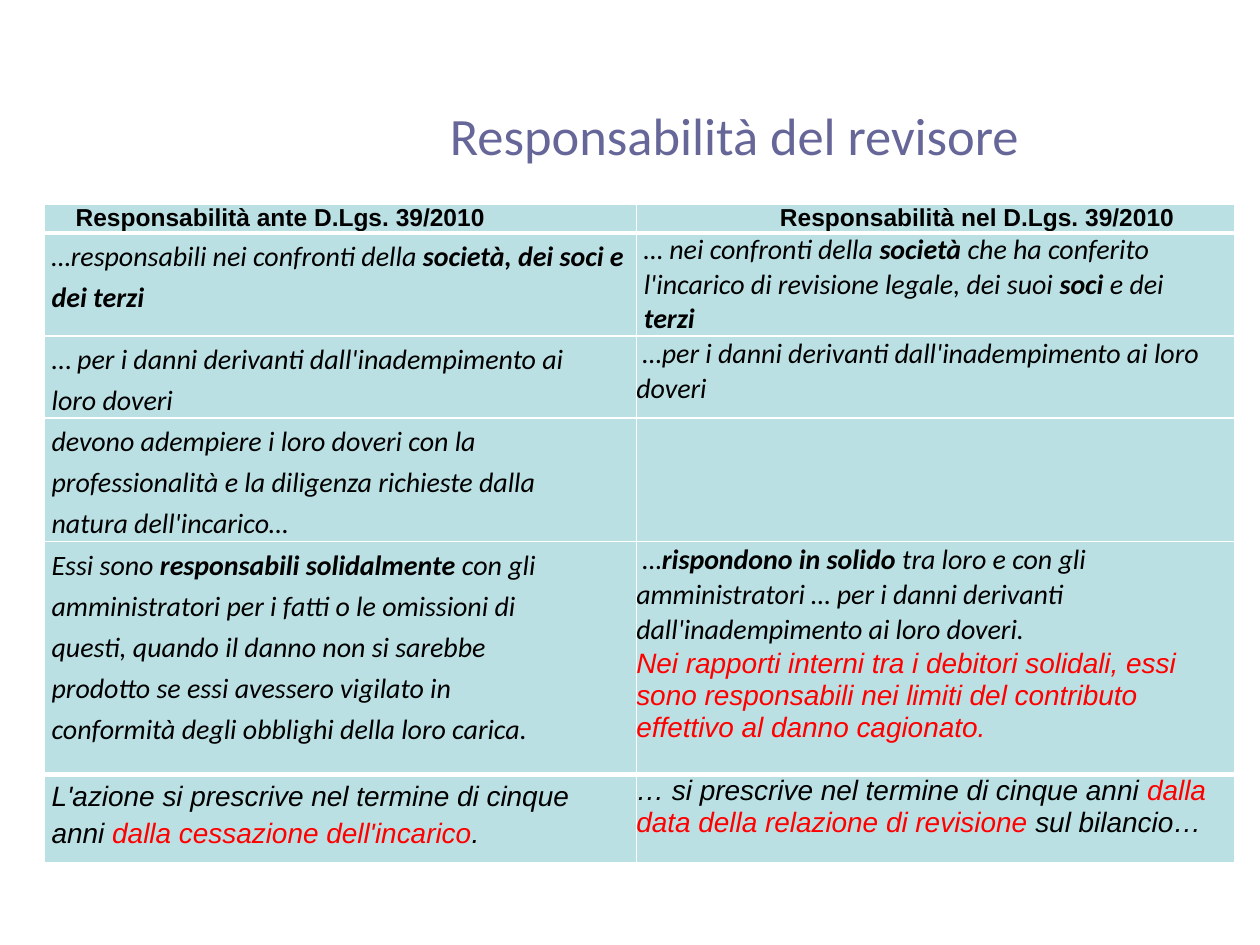
from lxml.etree import SubElement
from pptx import Presentation
from pptx.dml.color import RGBColor
from pptx.enum.text import MSO_ANCHOR, PP_ALIGN
from pptx.oxml.ns import qn
from pptx.util import Inches, Pt

COLORS = {"title": "666699", "text": "000000", "accent": "FF0000",
          "cell": "BBE0E3", "border": "FFFFFF"}
TITLE = "Responsabilità del revisore"
HEADERS = ["Responsabilità ante D.Lgs. 39/2010", "Responsabilità nel D.Lgs. 39/2010"]
HEADER_INDENTS = [0.25, 1.14]
COLUMN_WIDTHS = [4.7, 4.75]
ROW_HEIGHTS = [0.23, 0.77, 0.63, 0.98, 1.85, 0.7]

# Each cell holds paragraphs of (text, style) runs: b bold, i italic, a Arial, r red
BODY = [
    ([[("…responsabili nei confronti della ", "i"), ("società, dei soci e dei terzi", "bi")]],
     [[("… nei confronti della ", "i"), ("società", "bi"),
       (" che ha conferito l'incarico di revisione legale, dei suoi ", "i"),
       ("soci ", "bi"), ("e dei ", "i"), ("terzi", "bi")]]),
    ([[("… ", ""), ("per i danni derivanti dall'inadempimento ai loro doveri", "i")]],
     [[(" …per i danni derivanti dall'inadempimento ai loro doveri", "i")]]),
    ([[("devono adempiere i loro doveri con la professionalità e la diligenza "
        "richieste dalla natura dell'incarico…", "i")]],
     []),
    ([[("Essi sono ", "i"), ("responsabili solidalmente", "bi"),
       (" con gli amministratori per i fatti o le omissioni di questi, quando il danno "
        "non si sarebbe prodotto se essi avessero vigilato in conformità degli obblighi "
        "della loro carica.", "i")]],
     [[(" …", "i"), ("rispondono in solido", "bi"),
       (" tra loro e con gli amministratori … per i danni derivanti "
        "dall'inadempimento ai loro doveri.", "i")],
      [("Nei rapporti interni tra i debitori solidali, essi sono responsabili nei limiti "
        "del contributo effettivo al danno cagionato.", "iar")]]),
    ([[("L'azione si prescrive nel termine di cinque anni ", "ia"),
       ("dalla cessazione dell'incarico", "iar"), (".", "ia")]],
     [[("… si prescrive nel termine di cinque anni ", "ia"),
       ("dalla data della relazione di revisione", "iar"), (" sul bilancio…", "ia")]]),
]


def set_borders(cell, row_index):
    """Draw white borders, thick below the header and above the last row."""
    last_row = len(ROW_HEIGHTS) - 1
    widths = {"L": 1, "R": 1,
              "T": 3 if row_index in (1, last_row) else 1,
              "B": 3 if row_index in (0, last_row - 1) else 1}
    properties = cell._tc.get_or_add_tcPr()
    for side, width in widths.items():
        line = SubElement(properties, qn(f"a:ln{side}"), w=str(Pt(width)))
        fill = SubElement(line, qn("a:solidFill"))
        SubElement(fill, qn("a:srgbClr"), val=COLORS["border"])


def format_cell(cell, row_index, right_margin):
    """Give a cell its margins, borders and fill."""
    cell.margin_left = cell.margin_top = cell.margin_bottom = 0
    cell.margin_right = Inches(right_margin)
    set_borders(cell, row_index)
    cell.fill.solid()
    cell.fill.fore_color.rgb = RGBColor.from_string(COLORS["cell"])


def format_paragraph(paragraph, indent, spacing, tab):
    """Set the indent, line spacing and optional tab stop."""
    properties = paragraph._p.get_or_add_pPr()
    properties.set("marL", str(Inches(indent)))
    properties.set("indent", "0")
    paragraph.line_spacing = spacing
    if tab:
        tabs = SubElement(properties, qn("a:tabLst"))
        SubElement(tabs, qn("a:tab"), pos=str(Inches(tab)), algn="l")


def add_run(paragraph, text, style, size):
    """Add one run in the given style."""
    run = paragraph.add_run()
    run.text = text
    font = run.font
    font.size = Pt(size)
    font.name = "Arial" if "a" in style else "Calibri"
    font.bold = "b" in style
    font.italic = "i" in style
    font.color.rgb = RGBColor.from_string(COLORS["accent" if "r" in style else "text"])


def add_title(slide):
    """Place and format the slide title."""
    title = slide.shapes.title
    title.left, title.top = Inches(2.16), Inches(0.6)
    title.width, title.height = Inches(7.34), Inches(0.94)
    title.text_frame.text = TITLE
    title.text_frame.vertical_anchor = MSO_ANCHOR.MIDDLE
    paragraph = title.text_frame.paragraphs[0]
    paragraph.alignment = PP_ALIGN.CENTER
    font = paragraph.runs[0].font
    font.size, font.name = Pt(30), "Calibri"
    font.color.rgb = RGBColor.from_string(COLORS["title"])


def add_comparison(slide):
    """Build the table comparing the two rules."""
    shape = slide.shapes.add_table(len(ROW_HEIGHTS), len(COLUMN_WIDTHS), Inches(0.35),
                                   Inches(1.62), Inches(9.45), Inches(5.28))
    table = shape.table
    for column, width in zip(table.columns, COLUMN_WIDTHS):
        column.width = Inches(width)
    for row, height in zip(table.rows, ROW_HEIGHTS):
        row.height = Inches(height)
    shape.height = Inches(5.28)

    for column_index, (text, indent) in enumerate(zip(HEADERS, HEADER_INDENTS)):
        cell = table.cell(0, column_index)
        format_cell(cell, 0, 0)
        paragraph = cell.text_frame.paragraphs[0]
        format_paragraph(paragraph, indent, 1.0, None)
        add_run(paragraph, text, "ba", 14)

    for row_index, row in enumerate(BODY, start=1):
        first = row_index == 1
        layouts = [(0 if first else 0.5, 0.06, 1.2, None),
                   (0.35, 0.06, 1.0, None) if first else (0, 0, 1.03, 0.25)]
        for column_index, (paragraphs, layout) in enumerate(zip(row, layouts)):
            right_margin, indent, spacing, tab = layout
            cell = table.cell(row_index, column_index)
            format_cell(cell, row_index, right_margin)
            frame = cell.text_frame
            for index, runs in enumerate(paragraphs):
                paragraph = frame.add_paragraph() if index else frame.paragraphs[0]
                format_paragraph(paragraph, indent, spacing, tab)
                for text, style in runs:
                    add_run(paragraph, text, style, 16)


def main():
    """Create the presentation."""
    presentation = Presentation()
    presentation.slide_width, presentation.slide_height = Inches(10), Inches(7.5)
    slide = presentation.slides.add_slide(presentation.slide_layouts[5])
    add_title(slide)
    add_comparison(slide)
    presentation.save("out.pptx")


if __name__ == "__main__":
    main()
